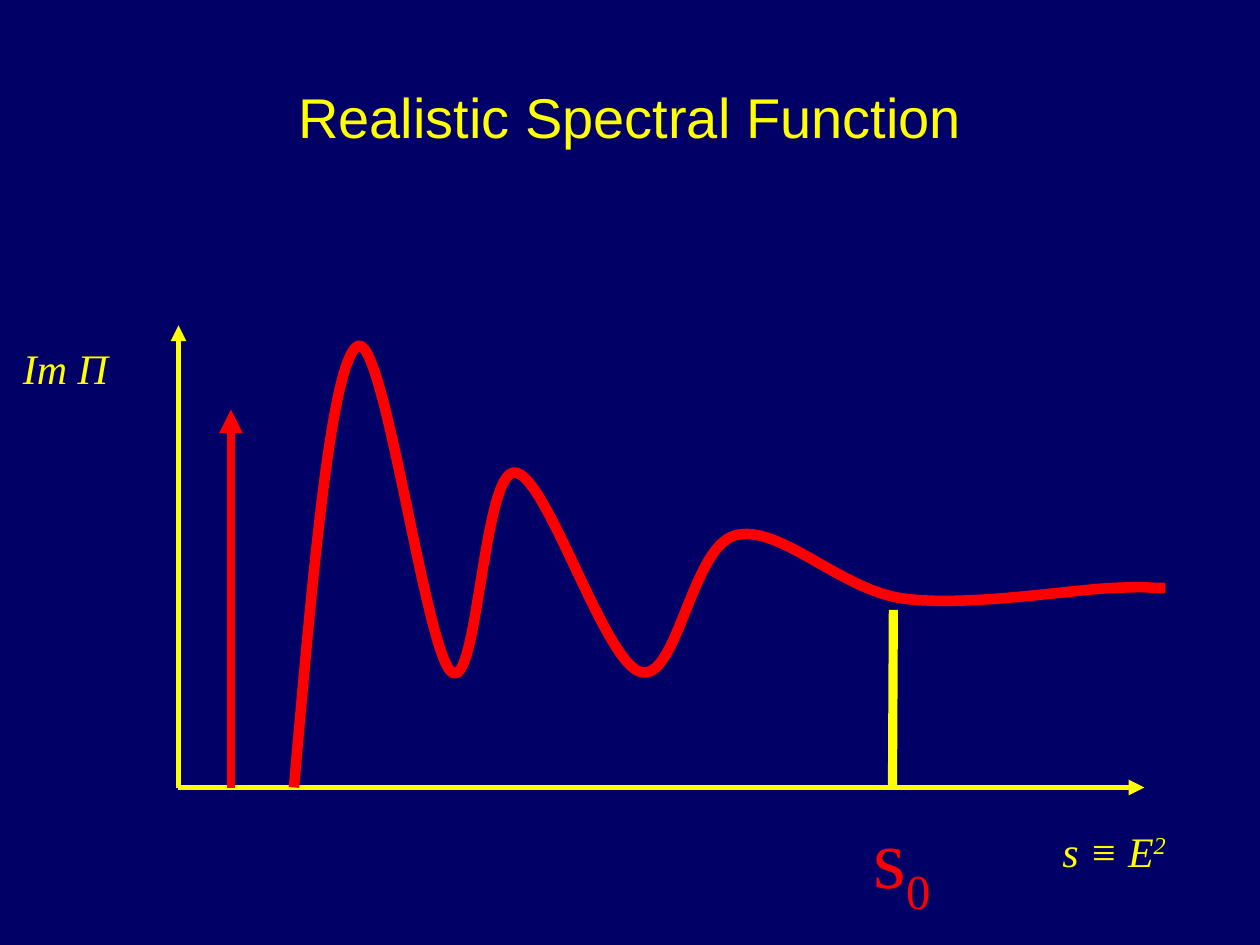
from pptx import Presentation
from pptx.dml.color import RGBColor
from pptx.enum.dml import MSO_LINE
from pptx.enum.shapes import MSO_CONNECTOR
from pptx.enum.text import MSO_ANCHOR, MSO_AUTO_SIZE, PP_ALIGN
from pptx.oxml.ns import qn
from pptx.util import Pt
from lxml import etree

STRAIGHT = MSO_CONNECTOR.STRAIGHT
SOLID = MSO_LINE.SOLID
TOP, MIDDLE = MSO_ANCHOR.TOP, MSO_ANCHOR.MIDDLE
LEFT, CENTER = PP_ALIGN.LEFT, PP_ALIGN.CENTER
GROW, FIXED = MSO_AUTO_SIZE.SHAPE_TO_FIT_TEXT, MSO_AUTO_SIZE.NONE

NAVY, YELLOW, RED = "000066", "FFFF00", "FF0000"
SANS, SERIF = "Arial", "Times New Roman"


def color(hex_text):
    return RGBColor.from_string(hex_text)


deck = Presentation()
deck.slide_width, deck.slide_height = Pt(720), Pt(540)
page = deck.slides.add_slide(deck.slide_layouts[6])
page.background.fill.solid()
page.background.fill.fore_color.rgb = color(NAVY)

# Axes and the bound-state arrow, which share the baseline
base = 450
arrows = [
    ((102, base), (102, 186), YELLOW, 3),
    ((102, base), (654, base), YELLOW, 3),
    ((132, base), (132, 234), RED, 4.5),
]
threshold = ((510.5, 348.5), (510, base), YELLOW, 5.25)


def add_line(start, end, hue, weight):
    line = page.shapes.add_connector(STRAIGHT, *map(Pt, start + end))
    line.line.color.rgb = color(hue)
    line.line.width = Pt(weight)
    etree.SubElement(line._element.spPr, qn("a:effectLst"))
    return line


for arrow in arrows:
    line = add_line(*arrow)
    etree.SubElement(line.line._get_or_add_ln(), qn("a:tailEnd"), type="triangle")

# Spectral curve: a start point, then three points for each Bezier segment
start = (168, base)
segments = [
    [(178.5, 330), (189, 209), (204, 198)],
    [(219, 187), (243, 372), (258, 384)],
    [(273, 396), (276, 270), (294, 270)],
    [(312, 270), (345, 378), (366, 384)],
    [(387, 390), (395, 313), (420, 306)],
    [(445, 299), (480, 337), (516, 342)],
    [(552, 347), (612, 337), (636, 336)],
    [(660, 335), (655, 336), (660, 336)],
    [(665, 336), (665, 336), (666, 336)],
]
builder = page.shapes.build_freeform(Pt(start[0]), Pt(start[1]))
builder.add_line_segments(
    [(Pt(x), Pt(y)) for segment in segments for x, y in segment], close=False
)
curve = builder.convert_to_shape()
curve.shadow.inherit = False
curve.fill.background()
curve.line.color.rgb = color(RED)
curve.line.width = Pt(6)
curve.line.dash_style = SOLID

# Turn each three straight steps into one cubic segment
outline = next(curve._element.iter(qn("a:path")))
steps = outline.findall(qn("a:lnTo"))
for first in range(0, len(steps), 3):
    cubic = etree.SubElement(outline, qn("a:cubicBezTo"))
    for step in steps[first:first + 3]:
        cubic.append(step[0])
        outline.remove(step)

# Title and labels: place, font, size, colour, italic, align, anchor, fit, runs
labels = [
    ((36, 21.6, 648, 90), SANS, 32, YELLOW, False, CENTER, MIDDLE, FIXED,
     [("Realistic Spectral Function", 0)]),
    ((6, 192, 78, 36), SERIF, 24, YELLOW, True, LEFT, TOP, GROW,
     [("Im Π", 0)]),
    ((600, 468, 96, 36), SERIF, 24, YELLOW, True, LEFT, TOP, GROW,
     [("s ≡ E", 0), ("2", 30)]),
    ((492, 456, 78, 65.5), SERIF, 48, RED, False, LEFT, TOP, GROW,
     [("s", 0), ("0", -25)]),
]
for place, font, size, hue, italic, align, anchor, fit, runs in labels:
    box = page.shapes.add_textbox(*map(Pt, place))
    frame = box.text_frame
    frame.word_wrap = True
    frame.auto_size = fit
    frame.vertical_anchor = anchor
    para = frame.paragraphs[0]
    para.alignment = align
    for text, shift in runs:
        span = para.add_run()
        span.text = text
        span.font.name = font
        span.font.size = Pt(size)
        span.font.italic = italic
        span.font.color.rgb = color(hue)
        if shift:
            span.font._element.set("baseline", str(shift * 1000))

# Threshold marker at s0
add_line(*threshold)

deck.save("out.pptx")
